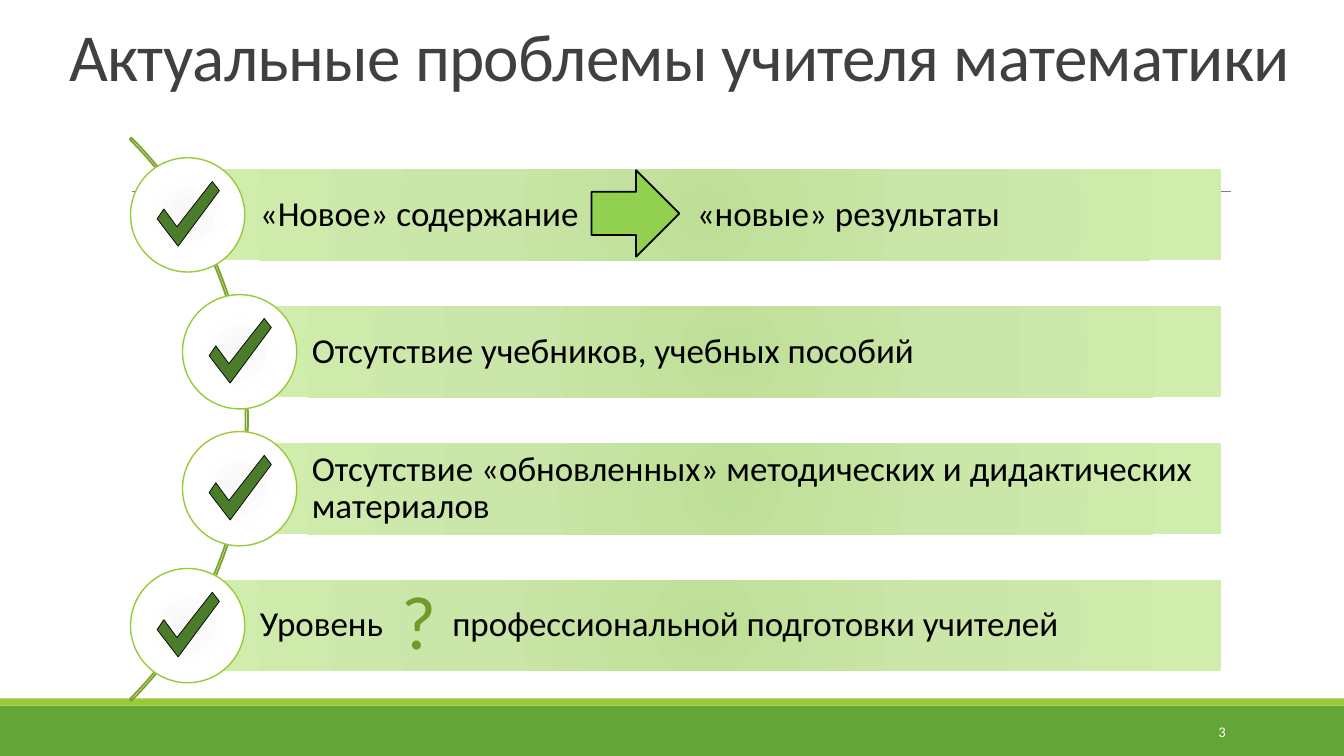
"""Build the slide about the current problems of a mathematics teacher."""
from dataclasses import dataclass
from typing import Optional

from lxml import etree
from pptx import Presentation
from pptx import util as u
from pptx.dml.color import RGBColor
from pptx.enum import shapes, text
from pptx.oxml import ns, parse_xml
from pptx.util import Cm

FONT = "Calibri"
BLACK = RGBColor(0x00, 0x00, 0x00)
WHITE = RGBColor(0xFF, 0xFF, 0xFF)
TITLE_GREY = RGBColor(0x40, 0x40, 0x40)
RULE_GREY = RGBColor(0x80, 0x80, 0x80)
FOOTER_GREEN = RGBColor(0x63, 0xA5, 0x37)
LIME = RGBColor(0x99, 0xCB, 0x38)
ARC_GREEN = RGBColor(0x7B, 0xA3, 0x2D)
ARROW_GREEN = RGBColor(0x92, 0xD0, 0x50)
QUESTION_GREEN = RGBColor(0x73, 0x9A, 0x28)
CHECK_GREEN = RGBColor(0x4A, 0x7C, 0x29)
BAR_GLOW = ("BEDF97", "CAE6A9", "D0EDAE")
BADGE_GLOW = ("F6F6F6", "FEFEFE", "FFFFFF")
GLOW_STOPS = (0, 45000, 100000)

SLIDE_WIDTH, SLIDE_HEIGHT = 33.87, 19.05
BAR_TOP, BAR_PITCH, BAR_HEIGHT, BAR_RIGHT = 4.27, 3.45, 2.29, 30.78
BADGE_SIZE = 2.88
TEXT_INDENT, TEXT_MARGIN = 1.82, 0.18
CHECK_OUTLINE = ((0.62, -0.84), (0.8, -0.61), (-0.24, 0.79),
                 (-0.77, 0.1), (-0.6, -0.15), (-0.27, 0.3))


@dataclass(frozen=True)
class Box:
    left: float
    top: float
    width: float
    height: float

    def lengths(self) -> tuple:
        return Cm(self.left), Cm(self.top), Cm(self.width), Cm(self.height)


@dataclass(frozen=True)
class Style:
    size: float
    color: RGBColor
    align: text.PP_ALIGN = text.PP_ALIGN.LEFT
    anchor: text.MSO_ANCHOR = text.MSO_ANCHOR.MIDDLE
    line_spacing: float = 1.0
    tracking: int = 0


@dataclass(frozen=True)
class Problem:
    left: float
    opening: str
    ending: str = ""
    ending_left: float = 0


PROBLEM_STYLE = Style(25, BLACK, line_spacing=0.9)
PROBLEMS = (
    Problem(4.73, "«Новое» содержание", "«новые» результаты", 17.56),
    Problem(6.04, "Отсутствие учебников, учебных пособий"),
    Problem(6.04, "Отсутствие «обновленных» методических и дидактических материалов"),
    Problem(4.73, "Уровень", "профессиональной подготовки учителей", 11.4),
)


def paint(shape, fill: Optional[RGBColor], line: Optional[RGBColor] = None, weight: float = 1) -> None:
    shape.shadow.inherit = False
    if fill is None:
        shape.fill.background()
    else:
        shape.fill.solid()
        shape.fill.fore_color.rgb = fill
    if line is None:
        shape.line.fill.background()
    else:
        shape.line.color.rgb = line
        shape.line.width = u.Pt(weight)


def glow(shape, colors: tuple) -> None:
    stops = "".join(f'<a:gs pos="{position}"><a:srgbClr val="{color}"/></a:gs>'
                    for position, color in zip(GLOW_STOPS, colors))
    gradient = parse_xml(
        f'<a:gradFill {ns.nsdecls("a")} rotWithShape="1"><a:gsLst>{stops}</a:gsLst>'
        '<a:path path="circle"><a:fillToRect l="100000" t="100000" r="100000" b="100000"/>'
        '</a:path></a:gradFill>')
    properties = shape.element.spPr
    properties.replace(properties.find(ns.qn("a:solidFill")), gradient)


def add_figure(slide, kind: shapes.MSO_SHAPE, box: Box, fill: Optional[RGBColor],
               line: Optional[RGBColor] = None, weight: float = 1):
    figure = slide.shapes.add_shape(kind, *box.lengths())
    paint(figure, fill, line, weight)
    return figure


def add_label(slide, wording: str, box: Box, style: Style,
              margins: tuple = (0.25, 0.13, 0.25, 0.13)) -> None:
    frame = slide.shapes.add_textbox(*box.lengths()).text_frame
    frame.word_wrap = True
    frame.vertical_anchor = style.anchor
    frame.margin_left, frame.margin_top, frame.margin_right, frame.margin_bottom = map(Cm, margins)
    paragraph = frame.paragraphs[0]
    paragraph.alignment = style.align
    paragraph.line_spacing = style.line_spacing
    run = paragraph.add_run()
    run.text = wording
    run.font.name = FONT
    run.font.size = u.Pt(style.size)
    run.font.color.rgb = style.color
    if style.tracking:
        run.font._element.set("spc", str(style.tracking))


def add_rule(slide, left: float, right: float, top: float) -> None:
    rule = slide.shapes.add_connector(shapes.MSO_CONNECTOR.STRAIGHT,
                                      Cm(left), Cm(top), Cm(right), Cm(top))
    rule.line.color.rgb = RULE_GREY
    rule.line.width = u.Pt(0.5)
    etree.SubElement(rule.element.spPr, ns.qn("a:effectLst"))


def add_check(slide, center_x: float, center_y: float) -> None:
    points = [(Cm(center_x + x), Cm(center_y + y)) for x, y in CHECK_OUTLINE]
    builder = slide.shapes.build_freeform(*points[0])
    builder.add_line_segments(points[1:], close=True)
    paint(builder.convert_to_shape(), CHECK_GREEN, BLACK, 0.5)


def add_problem(slide, problem: Problem, top: float) -> None:
    bar_box = Box(problem.left, top, BAR_RIGHT - problem.left, BAR_HEIGHT)
    glow(add_figure(slide, shapes.MSO_SHAPE.RECTANGLE, bar_box, WHITE), BAR_GLOW)
    add_label(slide, problem.opening, bar_box, PROBLEM_STYLE,
              (TEXT_INDENT, TEXT_MARGIN, TEXT_MARGIN, TEXT_MARGIN))
    if problem.ending:
        ending_box = Box(problem.ending_left, top, BAR_RIGHT - problem.ending_left, BAR_HEIGHT)
        add_label(slide, problem.ending, ending_box, PROBLEM_STYLE,
                  (0, TEXT_MARGIN, TEXT_MARGIN, TEXT_MARGIN))
    middle = top + BAR_HEIGHT / 2
    badge_box = Box(problem.left - BADGE_SIZE / 2, middle - BADGE_SIZE / 2, BADGE_SIZE, BADGE_SIZE)
    glow(add_figure(slide, shapes.MSO_SHAPE.OVAL, badge_box, WHITE, LIME), BADGE_GLOW)
    add_check(slide, problem.left, middle)


def main() -> None:
    deck = Presentation()
    deck.slide_width, deck.slide_height = Cm(SLIDE_WIDTH), Cm(SLIDE_HEIGHT)
    slide = deck.slides.add_slide(deck.slide_layouts[6])

    add_figure(slide, shapes.MSO_SHAPE.RECTANGLE, Box(0, 17.78, SLIDE_WIDTH, 1.27), FOOTER_GREEN)
    add_figure(slide, shapes.MSO_SHAPE.RECTANGLE, Box(0, 17.6, SLIDE_WIDTH, 0.18), LIME)
    add_rule(slide, 3.33, 31.01, 4.83)
    add_label(slide, "Актуальные проблемы учителя математики", Box(0.74, 0.18, 32.77, 2.36),
              Style(48, TITLE_GREY, text.PP_ALIGN.CENTER, text.MSO_ANCHOR.BOTTOM, 0.85, -50))

    arc = add_figure(slide, shapes.MSO_SHAPE.BLOCK_ARC, Box(-13.82, 0.53, 20.07, 20.07),
                     None, ARC_GREEN, 1.25)
    for index, value in enumerate((189, 27, 0.003)):
        arc.adjustments[index] = value
    for row, problem in enumerate(PROBLEMS):
        add_problem(slide, problem, BAR_TOP + row * BAR_PITCH)

    add_figure(slide, shapes.MSO_SHAPE.RIGHT_ARROW, Box(14.91, 4.29, 2.21, 2.18),
               ARROW_GREEN, BLACK, 1.25)
    add_label(slide, "?", Box(9.55, 14.33, 2.01, 2.57),
              Style(54, QUESTION_GREEN, text.PP_ALIGN.CENTER, text.MSO_ANCHOR.TOP))
    add_label(slide, "3", Box(27.51, 17.93, 3.63, 1.02),
              Style(10.5, WHITE, text.PP_ALIGN.RIGHT))
    deck.save("out.pptx")


if __name__ == "__main__":
    main()
